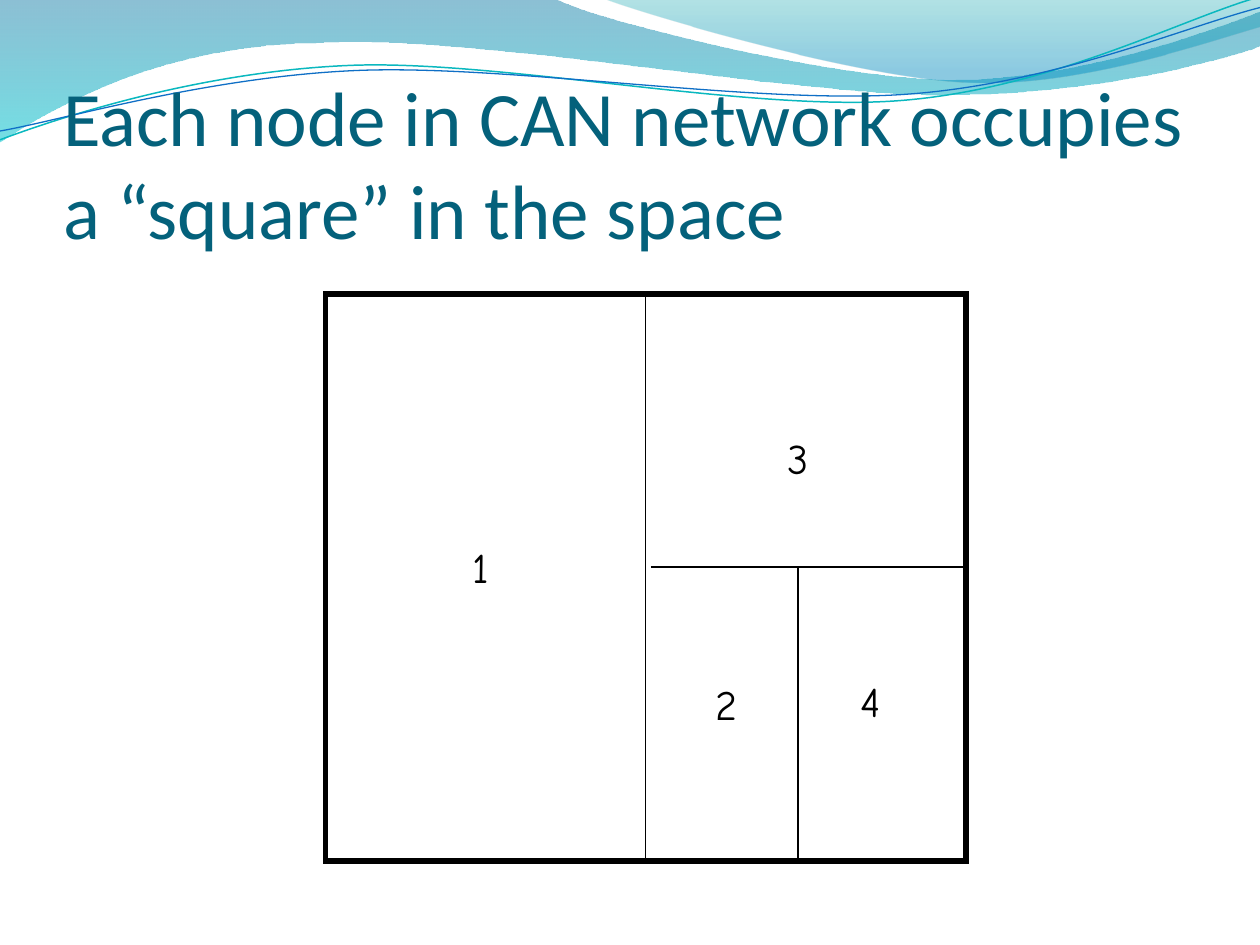
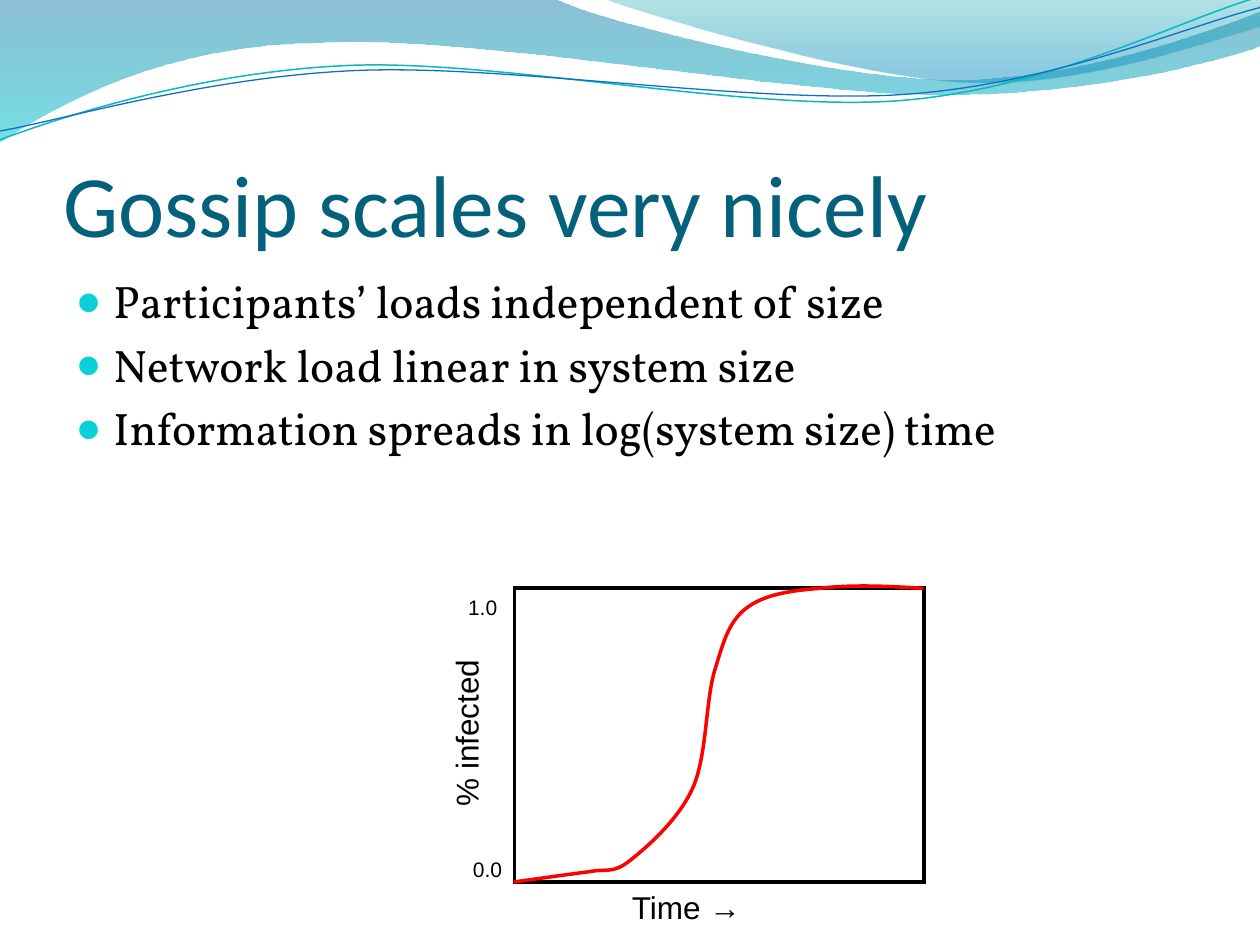
from lxml.etree import SubElement
from pptx import Presentation
from pptx.dml.color import RGBColor
from pptx.enum.shapes import MSO_CONNECTOR, MSO_SHAPE
from pptx.enum.text import MSO_ANCHOR, MSO_AUTO_SIZE, PP_ALIGN
from pptx.oxml.ns import qn
from pptx.util import Inches, Pt

BLACK = RGBColor(0x00, 0x00, 0x00)
WHITE = RGBColor(0xFF, 0xFF, 0xFF)
RED = RGBColor(0xFF, 0x00, 0x00)
TITLE_TEAL = RGBColor(0x04, 0x61, 0x7B)
BULLET_CYAN = RGBColor(0x0B, 0xD0, 0xD9)
WAVE_BLUE = RGBColor(0x00, 0x74, 0xA1)
WAVE_CYAN = RGBColor(0x00, 0xC6, 0xCF)
CREST_GREEN = RGBColor(0x00, 0xA1, 0xA9)
CREST_BLUE = RGBColor(0x00, 0x8B, 0xBF)
LINE_TEAL = RGBColor(0x0A, 0xB8, 0xBF)
LINE_BLUE = RGBColor(0x0F, 0x6F, 0xC6)

presentation = Presentation()
presentation.slide_width = Inches(10)
presentation.slide_height = Inches(7.5)
grid = presentation.slide_width // 120


def add_curve(slide, start, segments, closed=False):
    points = [(Inches(segment[i]), Inches(segment[i + 1]))
              for segment in segments for i in range(0, len(segment), 2)]
    builder = slide.shapes.build_freeform(Inches(start[0]), Inches(start[1]), scale=1.0)
    builder.add_line_segments(points, close=closed)
    shape = builder.convert_to_shape()
    steps = iter(list(shape.element.iter(qn("a:lnTo"))))
    for segment in segments:
        step = next(steps)
        if len(segment) == 6:
            step.tag = qn("a:cubicBezTo")
            for follower in (next(steps), next(steps)):
                step.append(follower[0])
                follower.getparent().remove(follower)
    shape.shadow.inherit = False
    shape.fill.background()
    shape.line.fill.background()
    return shape


def add_label(slide, text, box, font_name, size, wrap=True, align=PP_ALIGN.LEFT):
    label = slide.shapes.add_textbox(*(int(grid * length) for length in box))
    label.text_frame.word_wrap = wrap
    paragraph = label.text_frame.paragraphs[0]
    paragraph.text = text
    paragraph.alignment = align
    paragraph.font.name = font_name
    paragraph.font.size = Pt(size)
    paragraph.font.color.rgb = BLACK
    return label


can_slide = presentation.slides.add_slide(presentation.slide_layouts[5])
gossip_slide = presentation.slides.add_slide(presentation.slide_layouts[1])

wave = add_curve(can_slide, (0, -0.01), [
    (4.4, -0.01),
    (4.76, 0.17, 6.64, 0.63, 7.58, 0.63),
    (8.53, 0.63, 9.58, 0.26, 10, 0.09),
    (10.01, 0.36),
    (9.83, 0.44, 8.7, 0.76, 7.46, 0.75),
    (6.22, 0.75, 3.82, 0.28, 2.57, 0.34),
    (1.29, 0.35, 0.46, 0.83, -0.01, 1.13),
    (0, -0.01),
], closed=True)
crest = add_curve(can_slide, (4.79, -0.01), [
    (5.09, 0.11, 6.82, 0.62, 7.69, 0.65),
    (8.56, 0.69, 9.61, 0.32, 10, 0.21),
    (10, 0),
    (4.79, -0.01),
], closed=True)
for shape, stops in (
    (wave, [(0, WAVE_BLUE, 45), (1, WAVE_CYAN, 55)]),
    (crest, [(0, CREST_GREEN, 30), (0.8, CREST_BLUE, 45)]),
):
    shape.fill.gradient()
    shape.fill.gradient_angle = 270
    for gradient_stop, (position, color, opacity) in zip(shape.fill.gradient_stops, stops):
        gradient_stop.position = position
        gradient_stop.color.rgb = color
    for color_element, (position, color, opacity) in zip(shape.element.iter(qn("a:srgbClr")), stops):
        SubElement(color_element, qn("a:alpha"), val=str(opacity * 1000))

teal_line = add_curve(can_slide, (0, 1.11), [
    (0.48, 0.93, 1.58, 0.57, 2.77, 0.52),
    (3.95, 0.47, 5.93, 0.89, 7.13, 0.8),
    (8.33, 0.71, 9.38, 0.15, 9.98, -0.02),
])
blue_line = add_curve(can_slide, (0, 1.04), [
    (0.47, 0.96, 1.64, 0.61, 2.83, 0.56),
    (4.03, 0.51, 5.97, 0.83, 7.17, 0.75),
    (8.36, 0.67, 9.41, 0.21, 10, 0.06),
])
for shape, color, width in ((teal_line, LINE_TEAL, 0.85), (blue_line, LINE_BLUE, 0.75)):
    shape.line.color.rgb = color
    shape.line.width = Pt(width)

master_tree = presentation.slide_master.shapes.element
for order, shape in enumerate((wave, crest, teal_line, blue_line)):
    shape.element.nvSpPr.cNvPr.set("id", str(20 + order))
    master_tree.insert(2 + order, shape.element)

for slide, text, size in (
    (can_slide, "Each node in CAN network occupies a “square” in the space", 44),
    (gossip_slide, "Gossip scales very nicely", 50),
):
    title = slide.shapes.title
    title.left, title.top = 6 * grid, int(9.25 * grid)
    title.width, title.height = 108 * grid, 15 * grid
    frame = title.text_frame
    frame.text = text
    frame.auto_size = MSO_AUTO_SIZE.NONE
    frame.vertical_anchor = MSO_ANCHOR.BOTTOM
    frame.margin_left = frame.margin_right = frame.margin_bottom = 0
    frame.margin_top = Inches(0.05)
    paragraph = frame.paragraphs[0]
    paragraph.alignment = PP_ALIGN.LEFT
    paragraph.font.name = "Calibri"
    paragraph.font.size = Pt(size)
    paragraph.font.color.rgb = TITLE_TEAL

space = can_slide.shapes.add_shape(MSO_SHAPE.RECTANGLE, 31 * grid, 28 * grid, 61 * grid, 54 * grid)
space.fill.background()
plot = gossip_slide.shapes.add_shape(MSO_SHAPE.RECTANGLE, 49 * grid, 56 * grid, 39 * grid, 28 * grid)
plot.fill.solid()
plot.fill.fore_color.rgb = WHITE
for shape, width in ((space, 3), (plot, 2.25)):
    shape.shadow.inherit = False
    shape.line.color.rgb = BLACK
    shape.line.width = Pt(width)
    SubElement(shape.element.spPr.find(qn("a:ln")), qn("a:miter"), lim="800000")

dividers = []
for ends in ((61.5, 28, 61.5, 82), (62, 54, 92, 54), (76, 54, 76, 82)):
    divider = can_slide.shapes.add_connector(MSO_CONNECTOR.STRAIGHT, *(int(grid * end) for end in ends))
    divider.line.color.rgb = BLACK
    divider.line.width = Pt(0.75)
    SubElement(divider.element.spPr, qn("a:effectLst"))
    dividers.append(divider)
dividers[0].begin_connect(space, 0)
dividers[0].end_connect(space, 2)

for node, left, top in (("1", 43.8, 51), ("2", 67, 64), ("3", 73.8, 40.6), ("4", 80.8, 63.7)):
    add_label(can_slide, node, (left, top, 4.8, 6), "Comic Neue", 24, wrap=False)

body = gossip_slide.placeholders[1]
body.left, body.top = 6 * grid, int(25.4 * grid)
body.width, body.height = 108 * grid, int(57.6 * grid)
body.text_frame.text = "\n".join((
    "Participants’ loads independent of size",
    "Network load linear in system size",
    "Information spreads in log(system size) time",
))
body.text_frame.auto_size = MSO_AUTO_SIZE.NONE
for number, paragraph in enumerate(body.text_frame.paragraphs):
    properties = paragraph._p.get_or_add_pPr()
    properties.set("marL", str(Inches(0.3)))
    properties.set("indent", str(-Inches(0.3)))
    bullet_color = SubElement(properties, qn("a:buClr"))
    SubElement(bullet_color, qn("a:srgbClr"), val=str(BULLET_CYAN))
    SubElement(properties, qn("a:buSzPct"), val="95000")
    SubElement(properties, qn("a:buFont"), typeface="Arial")
    SubElement(properties, qn("a:buChar"), char="●")
    paragraph.space_before = Pt(5.2 if number else 0)
    paragraph.font.name = "Vollkorn"
    paragraph.font.size = Pt(26)
    paragraph.font.color.rgb = BLACK

infection_curve = add_curve(gossip_slide, (4.08, 7), [
    (4.3, 6.97, 4.51, 6.94, 4.67, 6.92),
    (4.82, 6.89, 4.86, 6.94, 5, 6.83),
    (5.14, 6.72, 5.39, 6.5, 5.5, 6.25),
    (5.61, 6, 5.6, 5.57, 5.67, 5.33),
    (5.74, 5.1, 5.78, 4.94, 5.92, 4.83),
    (6.06, 4.72, 6.26, 4.69, 6.5, 4.67),
    (6.74, 4.64, 7.03, 4.65, 7.33, 4.67),
])
infection_curve.line.color.rgb = RED
infection_curve.line.width = Pt(2)

infected_label = add_label(gossip_slide, "% infected", (34.9, 66.1, 19, 4.8), "Arial", 18)
infected_label.rotation = 270
add_label(gossip_slide, "0.0", (42, 81, 7, 3.6), "Arial", 12, align=PP_ALIGN.RIGHT)
add_label(gossip_slide, "1.0", (43.4, 56, 5.2, 3.6), "Arial", 12, wrap=False)
add_label(gossip_slide, "Time →", (59, 84, 22, 4.8), "Arial", 18)

presentation.save("out.pptx")
